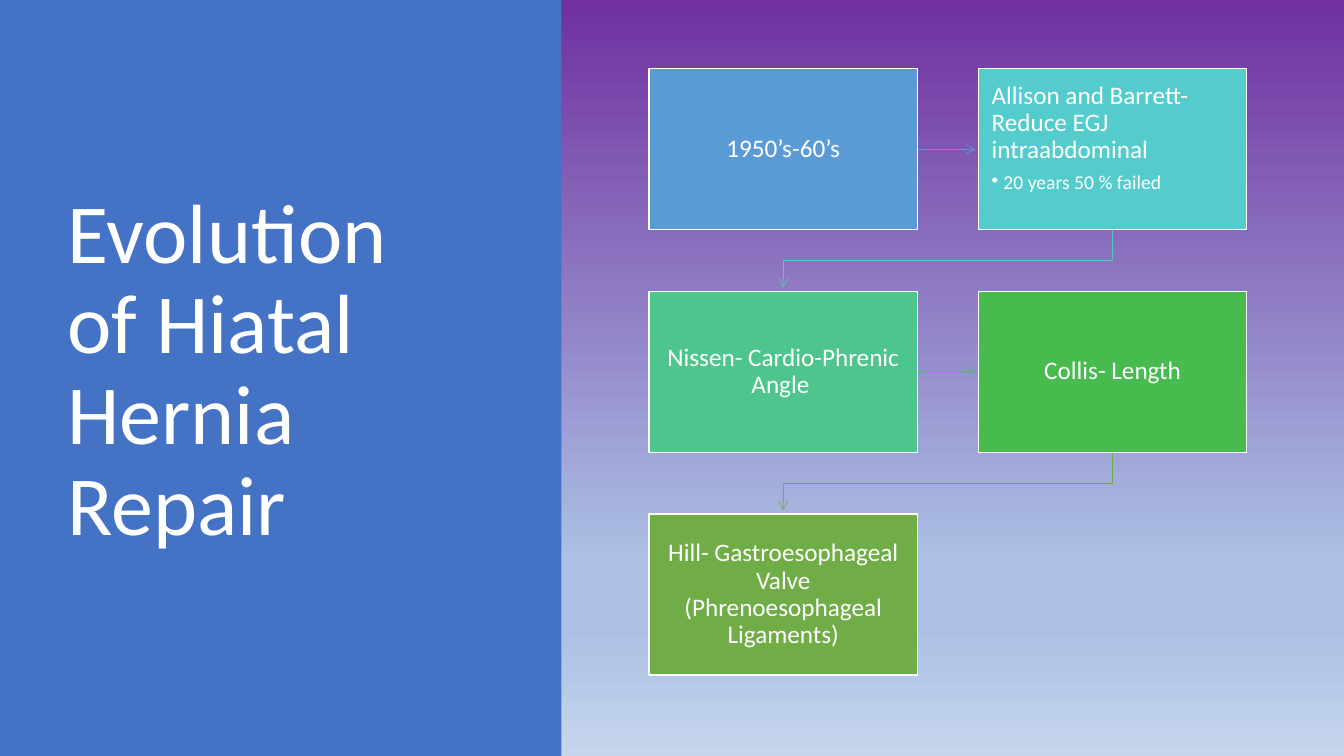
from dataclasses import dataclass

from lxml import etree
from pptx import Presentation
from pptx.dml.color import RGBColor
from pptx.enum.shapes import MSO_CONNECTOR, MSO_SHAPE
from pptx.enum.text import MSO_ANCHOR, PP_ALIGN
from pptx.oxml.ns import qn
from pptx.util import Cm, Pt

RECTANGLE = MSO_SHAPE.RECTANGLE
STRAIGHT = MSO_CONNECTOR.STRAIGHT
MIDDLE, TOP = MSO_ANCHOR.MIDDLE, MSO_ANCHOR.TOP
LEFT, CENTER = PP_ALIGN.LEFT, PP_ALIGN.CENTER

WHITE = RGBColor(0xFF, 0xFF, 0xFF)
PANEL_BLUE = RGBColor(0x44, 0x72, 0xC4)
BLUE = RGBColor(0x5B, 0x9B, 0xD5)
TURQUOISE = RGBColor(0x54, 0xCC, 0xCD)
TEAL = RGBColor(0x52, 0xCA, 0xB8)
MINT = RGBColor(0x4D, 0xC5, 0x8D)
EMERALD = RGBColor(0x49, 0xBF, 0x64)
GREEN = RGBColor(0x48, 0xBB, 0x4F)
OLIVE = RGBColor(0x70, 0xAD, 0x47)
PURPLE = RGBColor(0x70, 0x30, 0xA0)
PALE_BLUE = RGBColor(0xAB, 0xC0, 0xE4)
ICE_BLUE = RGBColor(0xC7, 0xD5, 0xED)
GRADIENT_STOPS = [(0, PURPLE), (74, PALE_BLUE), (83, PALE_BLUE), (100, ICE_BLUE)]

FONT = "Calibri"
SLIDE_WIDTH, SLIDE_HEIGHT = 33.87, 19.05
GRID_LEFT, GRID_TOP = 16.36, 1.73
BOX_WIDTH, BOX_HEIGHT = 6.76, 4.06
COLUMN_PITCH, ROW_PITCH = 8.3, 5.61
ARROW_LENGTH, ELBOW_DROP = 1.46, 0.77
COLUMNS = 2


@dataclass
class Step:
    text: str
    fill: RGBColor
    arrow: RGBColor | None = None
    detail: str = ""


STEPS = [
    Step("1950’s-60’s", BLUE, BLUE),
    Step("Allison and Barrett- Reduce EGJ intraabdominal", TURQUOISE, TEAL, "20 years 50 % failed"),
    Step("Nissen- Cardio-Phrenic Angle ", MINT, EMERALD),
    Step("Collis- Length", GREEN, OLIVE),
    Step("Hill- Gastroesophageal Valve (Phrenoesophageal Ligaments)", OLIVE),
]


def paint_background(slide) -> None:
    fill = slide.background.fill
    fill.gradient()
    fill.gradient_angle = 270
    stops = slide.element.find(".//" + qn("a:gsLst"))
    for stop in list(stops):
        stops.remove(stop)
    for percent, color in GRADIENT_STOPS:
        stop = etree.SubElement(stops, qn("a:gs"), pos=str(percent * 1000))
        etree.SubElement(stop, qn("a:srgbClr"), val=str(color))


def add_rectangle(slide, left: float, top: float, width: float, height: float, color: RGBColor):
    shape = slide.shapes.add_shape(RECTANGLE, Cm(left), Cm(top), Cm(width), Cm(height))
    shape.shadow.inherit = False
    shape.fill.solid()
    shape.fill.fore_color.rgb = color
    shape.line.fill.background()
    return shape


def style_paragraph(paragraph, size: float, alignment=LEFT, space_after: float = 0) -> None:
    paragraph.alignment = alignment
    paragraph.line_spacing = 0.9
    paragraph.space_after = Pt(space_after)
    for run in paragraph.runs:
        run.font.name = FONT
        run.font.size = Pt(size)
        run.font.color.rgb = WHITE


def add_title(slide, text: str) -> None:
    box = slide.shapes.add_textbox(Cm(1.45), Cm(1.73), Cm(10.57), Cm(15.29))
    frame = box.text_frame
    frame.word_wrap = True
    frame.vertical_anchor = MIDDLE
    frame.text = text
    style_paragraph(frame.paragraphs[0], 60)


def add_detail(frame, text: str) -> None:
    paragraph = frame.add_paragraph()
    paragraph.text = text
    properties = paragraph._p.get_or_add_pPr()
    properties.set("marL", str(Cm(0.3)))
    properties.set("indent", str(-Cm(0.3)))
    etree.SubElement(properties, qn("a:buChar"), char="•")
    paragraph.level = 1
    style_paragraph(paragraph, 14, space_after=2.1)


def add_step(slide, step: Step, left: float, top: float) -> None:
    shape = add_rectangle(slide, left, top, BOX_WIDTH, BOX_HEIGHT, step.fill)
    shape.line.color.rgb = WHITE
    shape.line.width = Pt(1)
    frame = shape.text_frame
    frame.word_wrap = True
    frame.vertical_anchor = TOP if step.detail else MIDDLE
    frame.margin_left = frame.margin_right = Cm(0.33)
    frame.margin_top = frame.margin_bottom = Cm(0.35)
    frame.text = step.text
    style_paragraph(frame.paragraphs[0], 18, LEFT if step.detail else CENTER, 6.3)
    if step.detail:
        add_detail(frame, step.detail)


def style_arrow(arrow, color: RGBColor) -> None:
    arrow.line.color.rgb = color
    arrow.line.width = Pt(0.5)
    etree.SubElement(arrow.line._get_or_add_ln(), qn("a:tailEnd"), type="arrow")


def add_straight_arrow(slide, left: float, top: float, color: RGBColor) -> None:
    start, middle = left + BOX_WIDTH, top + BOX_HEIGHT / 2
    arrow = slide.shapes.add_connector(
        STRAIGHT, Cm(start), Cm(middle), Cm(start + ARROW_LENGTH), Cm(middle)
    )
    style_arrow(arrow, color)
    etree.SubElement(arrow._element.spPr, qn("a:effectLst"))


def add_elbow_arrow(slide, left: float, top: float, color: RGBColor) -> None:
    start = left + BOX_WIDTH / 2
    end = start - COLUMN_PITCH
    bottom = top + BOX_HEIGHT
    turn = bottom + ELBOW_DROP
    points = [(start, turn), (end, turn), (end, bottom + ARROW_LENGTH)]
    builder = slide.shapes.build_freeform(Cm(start), Cm(bottom))
    builder.add_line_segments([(Cm(x), Cm(y)) for x, y in points], close=False)
    arrow = builder.convert_to_shape()
    arrow.shadow.inherit = False
    arrow.fill.background()
    style_arrow(arrow, color)


def main() -> None:
    presentation = Presentation()
    presentation.slide_width = Cm(SLIDE_WIDTH)
    presentation.slide_height = Cm(SLIDE_HEIGHT)
    slide = presentation.slides.add_slide(presentation.slide_layouts[6])
    paint_background(slide)
    add_rectangle(slide, 0, 0, 14.15, SLIDE_HEIGHT, PANEL_BLUE)
    add_title(slide, "Evolution of Hiatal Hernia Repair")
    for index, step in enumerate(STEPS):
        row, column = divmod(index, COLUMNS)
        left = GRID_LEFT + column * COLUMN_PITCH
        top = GRID_TOP + row * ROW_PITCH
        if step.arrow is not None:
            add_arrow = add_elbow_arrow if column == COLUMNS - 1 else add_straight_arrow
            add_arrow(slide, left, top, step.arrow)
        add_step(slide, step, left, top)
    presentation.save("out.pptx")


if __name__ == "__main__":
    main()
